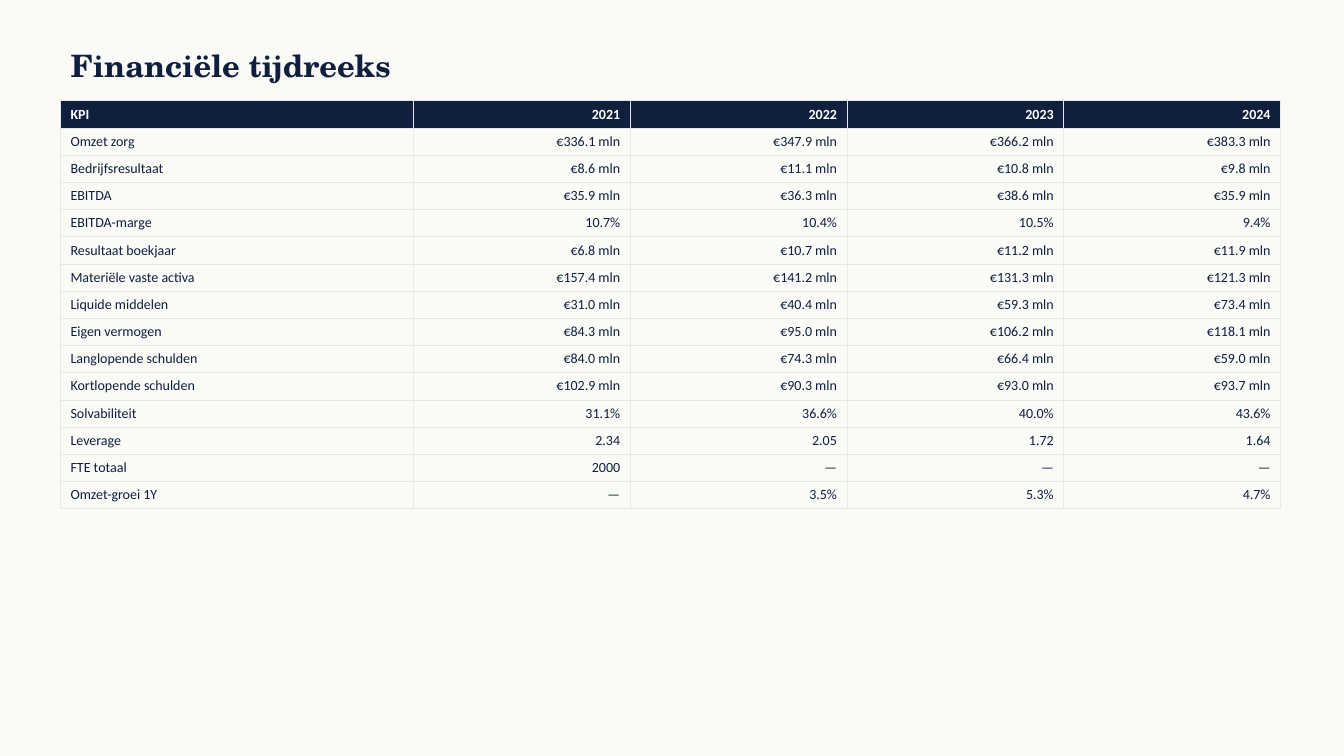
from lxml import etree
from pptx import Presentation
from pptx import util as u
from pptx.dml.color import RGBColor
from pptx.enum import text
from pptx.oxml.ns import qn

TITLE = "Financiële tijdreeks"
HEADER = ("KPI", "2021", "2022", "2023", "2024")
KPIS = [
    ("Omzet zorg", "€336.1 mln", "€347.9 mln", "€366.2 mln", "€383.3 mln"),
    ("Bedrijfsresultaat", "€8.6 mln", "€11.1 mln", "€10.8 mln", "€9.8 mln"),
    ("EBITDA", "€35.9 mln", "€36.3 mln", "€38.6 mln", "€35.9 mln"),
    ("EBITDA-marge", "10.7%", "10.4%", "10.5%", "9.4%"),
    ("Resultaat boekjaar", "€6.8 mln", "€10.7 mln", "€11.2 mln", "€11.9 mln"),
    ("Materiële vaste activa", "€157.4 mln", "€141.2 mln", "€131.3 mln", "€121.3 mln"),
    ("Liquide middelen", "€31.0 mln", "€40.4 mln", "€59.3 mln", "€73.4 mln"),
    ("Eigen vermogen", "€84.3 mln", "€95.0 mln", "€106.2 mln", "€118.1 mln"),
    ("Langlopende schulden", "€84.0 mln", "€74.3 mln", "€66.4 mln", "€59.0 mln"),
    ("Kortlopende schulden", "€102.9 mln", "€90.3 mln", "€93.0 mln", "€93.7 mln"),
    ("Solvabiliteit", "31.1%", "36.6%", "40.0%", "43.6%"),
    ("Leverage", "2.34", "2.05", "1.72", "1.64"),
    ("FTE totaal", "2000", "—", "—", "—"),
    ("Omzet-groei 1Y", "—", "3.5%", "5.3%", "4.7%"),
]

NAVY, WHITE, PAPER, GRID = "0F1F3D", "FFFFFF", "FAFAF7", "E5E7EB"
LEFT, TABLE_TOP, ROW_HEIGHT = 0.6, 1, 0.27
COLUMN_WIDTHS = (3.5, 2.15, 2.15, 2.15, 2.15)


def color(value):
    return RGBColor.from_string(value)


def add_run(paragraph, words, font_name, size, fill, bold):
    run = paragraph.add_run()
    run.text = words
    run.font.name = font_name
    run.font.size = u.Pt(size)
    run.font.bold = bold
    run.font.color.rgb = color(fill)


def add_borders(cell):
    properties = cell._tc.get_or_add_tcPr()
    for index, side in enumerate(("lnL", "lnR", "lnT", "lnB")):
        line = etree.Element(qn(f"a:{side}"), w=str(u.Pt(0.5)))
        fill = etree.SubElement(line, qn("a:solidFill"))
        etree.SubElement(fill, qn("a:srgbClr"), val=GRID)
        properties.insert(index, line)


def add_title(slide):
    title = slide.shapes.title
    title.left, title.top = u.Inches(LEFT), u.Inches(0.4)
    title.width, title.height = u.Inches(12), u.Inches(0.5)
    frame = title.text_frame
    frame.vertical_anchor = text.MSO_ANCHOR.MIDDLE
    frame.auto_size = text.MSO_AUTO_SIZE.NONE
    paragraph = frame.paragraphs[0]
    paragraph.alignment = text.PP_ALIGN.LEFT
    add_run(paragraph, TITLE, "TeX Gyre Schola", 22, NAVY, True)


def add_kpi_table(slide):
    rows = [HEADER, *KPIS]
    table = slide.shapes.add_table(
        len(rows), len(HEADER), u.Inches(LEFT), u.Inches(TABLE_TOP),
        u.Inches(sum(COLUMN_WIDTHS)), u.Inches(ROW_HEIGHT * len(rows))).table
    table.horz_banding = False
    for column, width in zip(table.columns, COLUMN_WIDTHS):
        column.width = u.Inches(width)

    for row_index, values in enumerate(rows):
        table.rows[row_index].height = u.Inches(ROW_HEIGHT)
        is_header = row_index == 0
        for column_index, value in enumerate(values):
            cell = table.cell(row_index, column_index)
            if is_header:
                cell.fill.solid()
                cell.fill.fore_color.rgb = color(NAVY)
            else:
                cell.fill.background()
            add_borders(cell)
            paragraph = cell.text_frame.paragraphs[0]
            if column_index:
                paragraph.alignment = text.PP_ALIGN.RIGHT
            add_run(paragraph, value, "Calibri", 10, WHITE if is_header else NAVY, is_header)


def main():
    presentation = Presentation()
    presentation.slide_width = u.Inches(13.33)
    presentation.slide_height = u.Inches(7.5)

    # Title-only slide on a paper-coloured background
    slide = presentation.slides.add_slide(presentation.slide_layouts[5])
    slide.background.fill.solid()
    slide.background.fill.fore_color.rgb = color(PAPER)

    add_title(slide)
    add_kpi_table(slide)
    presentation.save("out.pptx")


if __name__ == "__main__":
    main()
